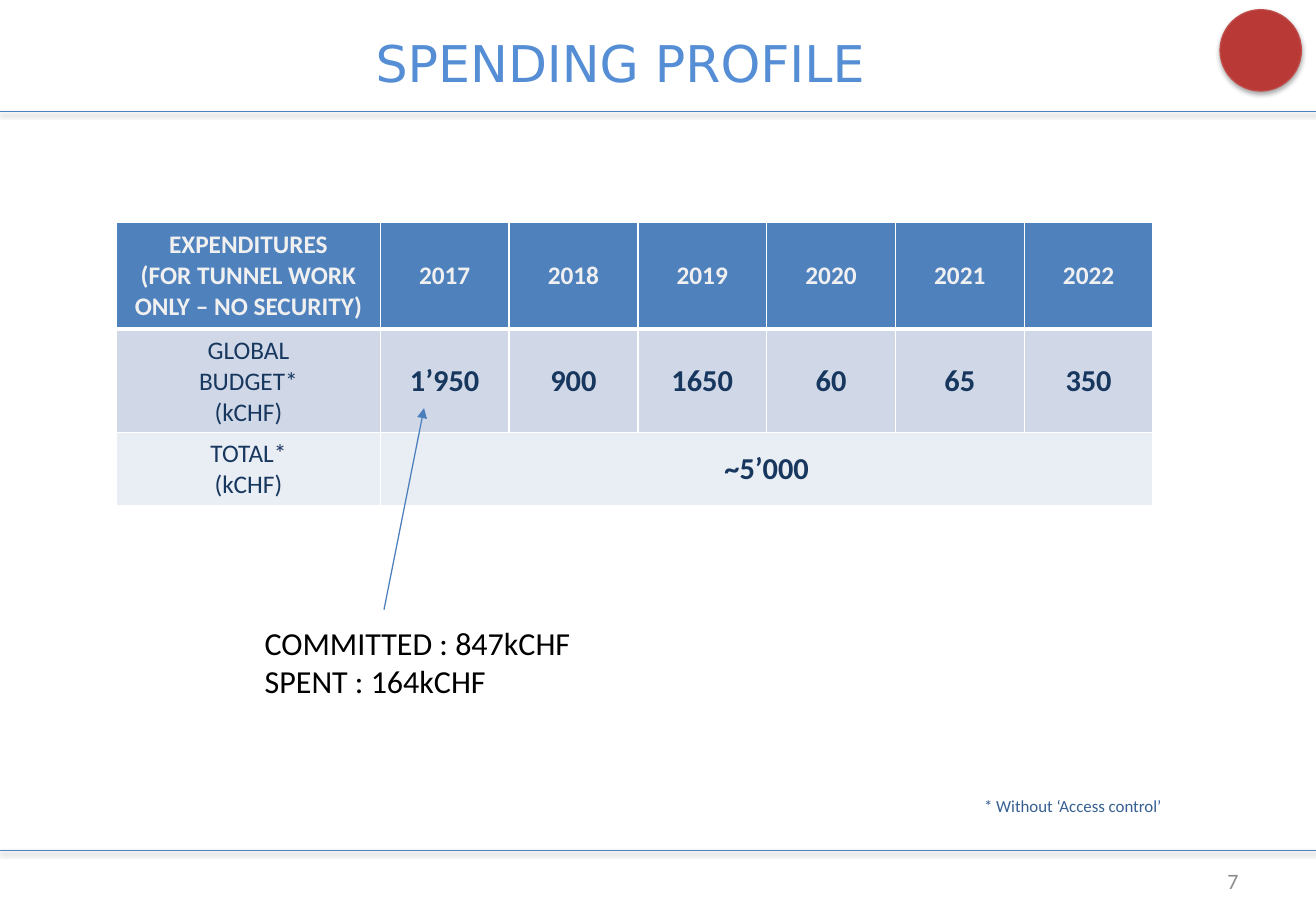
from dataclasses import dataclass

from lxml import etree
from pptx import Presentation
from pptx.dml.color import RGBColor
from pptx.enum.shapes import MSO_CONNECTOR, MSO_SHAPE
from pptx.enum.text import MSO_ANCHOR, PP_ALIGN
from pptx.oxml.ns import qn
from pptx.util import Inches, Pt

STRAIGHT = MSO_CONNECTOR.STRAIGHT
OVAL = MSO_SHAPE.OVAL
TOP, MIDDLE = MSO_ANCHOR.TOP, MSO_ANCHOR.MIDDLE
LEFT, CENTER, RIGHT = PP_ALIGN.LEFT, PP_ALIGN.CENTER, PP_ALIGN.RIGHT


@dataclass(frozen=True)
class Theme:
    paper: str = "FFFFFF"
    ink: str = "000000"
    title: str = "558ED5"
    rule: str = "4F81BD"
    arrow: str = "4B7EBC"
    badge: str = "B93936"
    badge_edge: str = "BF4C48"
    header_text: str = "F0F0F0"
    cell_text: str = "17375E"
    footnote: str = "376092"
    page_number: str = "8C8C8C"
    row_fills: tuple = ("4F81BD", "D0D8E8", "E9EDF4")
    body_font: str = "Calibri"
    title_font: str = "DejaVu Sans"
    title_size: int = 30
    note_size: int = 19
    amount_size: int = 18
    label_size: int = 15
    page_size: int = 13
    footnote_size: int = 10


THEME = Theme()


def write_text(frame, text, size, color, font=THEME.body_font, bold=False,
               align=LEFT, anchor=TOP, wrap=True):
    """Fill a text frame with one paragraph per line of text."""
    frame.word_wrap = wrap
    frame.vertical_anchor = anchor
    for index, line in enumerate(text.split("\n")):
        paragraph = frame.paragraphs[0] if index == 0 else frame.add_paragraph()
        paragraph.alignment = align
        run = paragraph.add_run()
        run.text = line
        run.font.name = font
        run.font.size = Pt(size)
        run.font.bold = bold
        run.font.color.rgb = RGBColor.from_string(color)


def set_effects(shape, shadow_alpha=0):
    """Replace inherited effects with a soft downward shadow, or with none."""
    effects = etree.SubElement(shape._element.spPr, qn("a:effectLst"))
    if shadow_alpha:
        shadow = etree.SubElement(
            effects, qn("a:outerShdw"), blurRad=str(Pt(3.1)), dist=str(Pt(1.7)),
            dir="5400000", rotWithShape="0")
        black = etree.SubElement(shadow, qn("a:srgbClr"), val=THEME.ink)
        etree.SubElement(black, qn("a:alpha"), val=str(shadow_alpha * 1000))


prs = Presentation()
prs.slide_width, prs.slide_height = Inches(10.83), Inches(7.5)
slide = prs.slides.add_slide(prs.slide_layouts[6])
slide.background.fill.solid()
slide.background.fill.fore_color.rgb = RGBColor.from_string(THEME.paper)

# Header and footer rules
for rule_y in (0.92, 7):
    rule = slide.shapes.add_connector(
        STRAIGHT, 0, Inches(rule_y), prs.slide_width, Inches(rule_y))
    rule.line.color.rgb = RGBColor.from_string(THEME.rule)
    rule.line.width = Pt(0.25)
    set_effects(rule, shadow_alpha=38)

# Corner badge
badge = slide.shapes.add_shape(
    OVAL, Inches(10.04), Inches(0.08), Inches(0.67), Inches(0.67))
badge.fill.solid()
badge.fill.fore_color.rgb = RGBColor.from_string(THEME.badge)
badge.line.color.rgb = RGBColor.from_string(THEME.badge_edge)
badge.line.width = Pt(0.75)
set_effects(badge, shadow_alpha=35)

# Title, page number and notes
texts = [
    ((1.19, 0.01, 7.83, 1), "SPENDING PROFILE",
     dict(size=THEME.title_size, color=THEME.title, font=THEME.title_font,
          align=CENTER, anchor=MIDDLE)),
    ((7.76, 7.05, 2.53, 0.4), "7",
     dict(size=THEME.page_size, color=THEME.page_number, align=RIGHT,
          anchor=MIDDLE)),
    ((8, 6.5, 2.19, 0.27), "* Without ‘Access control’",
     dict(size=THEME.footnote_size, color=THEME.footnote)),
    ((2.08, 5.08, 2.75, 0.74), "COMMITTED : 847kCHF\nSPENT : 164kCHF",
     dict(size=THEME.note_size, color=THEME.ink, wrap=False)),
]
for box, text, style in texts:
    text_box = slide.shapes.add_textbox(*(Inches(length) for length in box))
    write_text(text_box.text_frame, text, **style)

# Budget table
budget_rows = [
    ["EXPENDITURES\n(FOR TUNNEL WORK ONLY – NO SECURITY)",
     "2017", "2018", "2019", "2020", "2021", "2022"],
    ["GLOBAL\nBUDGET*\n(kCHF)", "1’950", "900", "1650", "60", "65", "350"],
    ["TOTAL*\n(kCHF)", "~5’000"],
]
column_widths = [2.17] + [1.06] * 6
row_heights = [0.88, 0.85, 0.6]
budget = slide.shapes.add_table(
    len(row_heights), len(column_widths), Inches(0.96), Inches(1.83),
    Inches(sum(column_widths)), Inches(sum(row_heights))).table
for column, width in zip(budget.columns, column_widths):
    column.width = Inches(width)
for row, height in zip(budget.rows, row_heights):
    row.height = Inches(height)
budget.cell(2, 1).merge(budget.cell(2, 6))

for row_index, fill in enumerate(THEME.row_fills):
    is_header = row_index == 0
    for column_index in range(len(column_widths)):
        cell = budget.cell(row_index, column_index)
        for side in ("lnL", "lnR", "lnT", "lnB"):
            thick = (row_index, side) in ((0, "lnB"), (1, "lnT"))
            border = etree.SubElement(
                cell._tc.get_or_add_tcPr(), qn(f"a:{side}"),
                w=str(Pt(3 if thick else 1)))
            border_fill = etree.SubElement(border, qn("a:solidFill"))
            etree.SubElement(border_fill, qn("a:srgbClr"), val=THEME.paper)
        cell.fill.solid()
        cell.fill.fore_color.rgb = RGBColor.from_string(fill)
        cell.vertical_anchor = MIDDLE
        is_amount = not is_header and column_index > 0
        if is_amount:
            cell.margin_left = cell.margin_right = cell.margin_top = Inches(0.01)
            cell.margin_bottom = 0
        if column_index < len(budget_rows[row_index]):
            write_text(
                cell.text_frame, budget_rows[row_index][column_index],
                size=THEME.amount_size if is_amount else THEME.label_size,
                color=THEME.header_text if is_header else THEME.cell_text,
                bold=is_header or is_amount, align=CENTER, anchor=MIDDLE)

# Arrow from the commitment note to the 2017 budget
arrow = slide.shapes.add_connector(
    STRAIGHT, Inches(3.16), Inches(5.02), Inches(3.49), Inches(3.36))
arrow.line.color.rgb = RGBColor.from_string(THEME.arrow)
arrow.line.width = Pt(0.75)
etree.SubElement(arrow._element.spPr.find(qn("a:ln")), qn("a:tailEnd"),
                 type="triangle")
set_effects(arrow)

prs.save("out.pptx")
